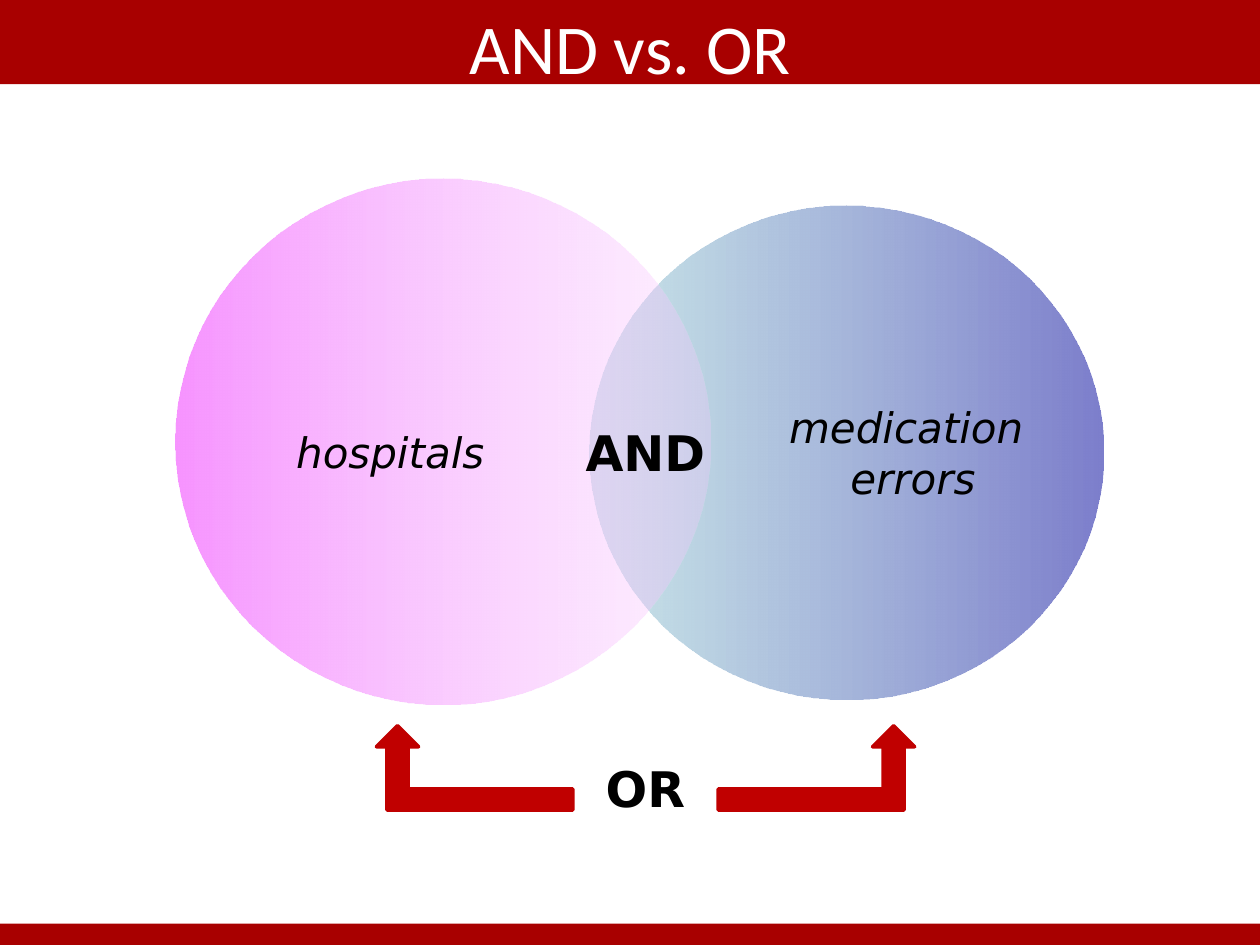
from pptx import Presentation
from pptx.dml.color import RGBColor
from pptx.enum.shapes import MSO_SHAPE
from pptx.enum.text import MSO_ANCHOR, PP_ALIGN
from pptx.oxml.ns import qn
from pptx.util import Cm, Pt
from lxml import etree

RECT, OVAL, ARROW = MSO_SHAPE.RECTANGLE, MSO_SHAPE.OVAL, MSO_SHAPE.BENT_UP_ARROW
TOP, MID = MSO_ANCHOR.TOP, MSO_ANCHOR.MIDDLE
CENTER = PP_ALIGN.CENTER

# Content: places are left, top, width, height in cm
WIDE, HIGH = 25.4, 19.05
BAR, RED, BLACK, WHITE = "A80000", "C00000", "000000", "FFFFFF"
BARS = [(0, 1.7), (18.62, 0.43)]  # top, height
# place, gradient stops as colour and opacity, label place, label lines
SETS = [
    ((11.89, 4.14, 10.36, 9.96), [("C0E1E4", 85), ("7D7FCC", 100)],
     (14.81, 7.21, 7.19, 3.81), ["medication ", "errors"]),
    ((3.53, 3.61, 10.8, 10.59), [("F794FF", 100), ("FACCFF", 30)],
     (4.24, 6.12, 7.26, 5.99), ["hospitals"]),
]
TITLE = "AND vs. OR"
WORDS = [("AND", 8.48), ("OR", 15.24)]  # word, top
ARROWS = [(7.59, True), (14.48, False)]  # left, mirrored

deck = Presentation()
deck.slide_width, deck.slide_height = Cm(WIDE), Cm(HIGH)
slide = deck.slides.add_slide(deck.slide_layouts[6])


def color(code):
    return RGBColor.from_string(code)


def draw(kind, place, fill=None):
    shape = slide.shapes.add_shape(kind, *map(Cm, place))
    shape.shadow.inherit = False
    shape.line.fill.background()
    if fill:
        shape.fill.solid()
        shape.fill.fore_color.rgb = color(fill)
    return shape


def shade(shape, stops):
    shape.fill.gradient()
    shape.fill.gradient_angle = 0
    for stop, (code, alpha) in zip(shape.fill.gradient_stops, stops):
        stop.color.rgb = color(code)
    nodes = shape.fill._xPr.iter(qn("a:srgbClr"))
    for node, (code, alpha) in zip(nodes, stops):
        if alpha < 100:
            etree.SubElement(node, qn("a:alpha")).set("val", str(alpha * 1000))


def write(place, lines, size, face="DejaVu Sans", ink=BLACK, bold=False,
          slant=False, wrap=False, anchor=MID):
    frame = slide.shapes.add_textbox(*map(Cm, place)).text_frame
    frame.word_wrap, frame.vertical_anchor = wrap, anchor
    frame.margin_left = frame.margin_right = 0
    for i, line in enumerate(lines):
        para = frame.add_paragraph() if i else frame.paragraphs[0]
        para.alignment = CENTER
        run = para.add_run()
        run.text = line
        font = run.font
        font.name, font.size, font.bold, font.italic = face, Pt(size), bold, slant
        font.color.rgb = color(ink)


# Bars at top and foot
for top, high in BARS:
    draw(RECT, (0, top, WIDE, high), BAR)

# Overlapping sets with labels
for place, stops, spot, lines in SETS:
    shade(draw(OVAL, place), stops)
    write(spot, lines, 24, slant=True)

# Title and operators
write((1.27, -0.03, 22.86, 1.96), [TITLE], 40, "Calibri", WHITE, wrap=True, anchor=TOP)
for word, top in WORDS:
    write((11.76, top, 2.5, 1.27), [word], 28, bold=True)

# Arrows from OR up to both sets
for left, flip in ARROWS:
    arrow = draw(ARROW, (left, 14.63, 3.96, 1.7), RED)
    arrow.line.color.rgb = color(RED)
    arrow.line.width = Pt(2)
    if flip:
        arrow._element.spPr.xfrm.set("flipH", "1")

deck.save("out.pptx")
